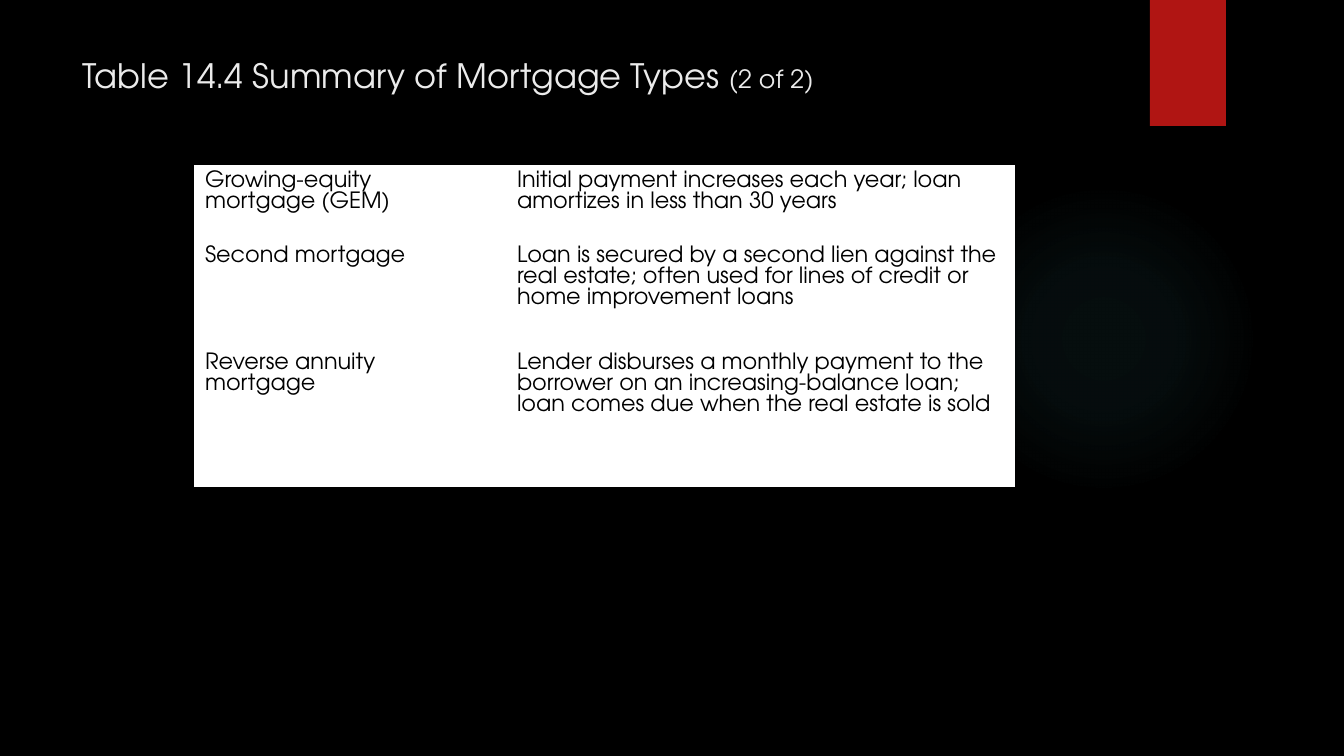
from lxml.etree import SubElement
from pptx import Presentation
from pptx.dml.color import RGBColor
from pptx.enum.shapes import MSO_SHAPE
from pptx.enum.text import MSO_ANCHOR, PP_ALIGN
from pptx.oxml import parse_xml
from pptx.oxml.ns import nsdecls, qn
from pptx.util import Emu, Pt

TITLE = [("Table 14.4 Summary of Mortgage Types ", 24), ("(2 of 2)", 18)]
MORTGAGES = [
    ("Growing-equity\nmortgage (GEM)",
     "Initial payment increases each year; loan amortizes in less than 30 years"),
    ("Second mortgage",
     "Loan is secured by a second lien against the real estate; often used for "
     "lines of credit or home improvement loans"),
    ("Reverse annuity\nmortgage",
     "Lender disburses a monthly payment to the borrower on an increasing-balance "
     "loan; loan comes due when the real estate is sold"),
]
COL_WIDTHS = [312, 507]
ROW_HEIGHTS = [75, 107, 138]
GLOW_STOPS = [(0, 7), (36, 6), (69, 0)]

FONT = "TeX Gyre Adventor"
BLACK = RGBColor(0x00, 0x00, 0x00)
WHITE = RGBColor(0xFF, 0xFF, 0xFF)
RED = RGBColor(0xB0, 0x15, 0x13)
TEAL = RGBColor(0x50, 0xB9, 0xC1)
LIGHT = RGBColor(0xEB, 0xEB, 0xEB)


def px(*values):
    """Turn px lengths into a list of EMU lengths."""
    return [Emu(round(v * 914400 / 100.8)) for v in values]


def add_plain_shape(s, kind, *box):
    """Add a shape without line or shadow."""
    sp = s.shapes.add_shape(kind, *px(*box))
    sp.shadow.inherit = False
    sp.line.fill.background()
    return sp


def add_glow(s):
    """Add the soft round light at the right."""
    sp = add_plain_shape(s, MSO_SHAPE.OVAL, 949, 184, 310, 310)
    stops = "".join(
        f'<a:gs pos="{pos * 1000}"><a:srgbClr val="{TEAL}">'
        f'<a:alpha val="{alpha * 1000}"/></a:srgbClr></a:gs>'
        for pos, alpha in GLOW_STOPS)
    grad = parse_xml(
        f'<a:gradFill {nsdecls("a")} rotWithShape="1"><a:gsLst>{stops}</a:gsLst>'
        '<a:path path="circle"><a:fillToRect l="50000" t="50000" r="50000" b="50000"/>'
        '</a:path></a:gradFill>')
    sp.fill.background()
    props = sp.fill._xPr
    props.replace(props.find(qn("a:noFill")), grad)


def style_run(r, size, color):
    """Set font, size and colour of a run."""
    r.font.name = FONT
    r.font.size = Pt(size)
    r.font.color.rgb = color


def set_title(s):
    """Place and fill the title placeholder."""
    sp = s.shapes.title
    sp.left, sp.top, sp.width, sp.height = px(72, 50, 1037, 154)
    tf = sp.text_frame
    tf.word_wrap = True
    tf.vertical_anchor = MSO_ANCHOR.TOP
    p = tf.paragraphs[0]
    p.alignment = PP_ALIGN.LEFT
    for text, size in TITLE:
        r = p.add_run()
        r.text = text
        style_run(r, size, LIGHT)


def fill_cell(cell, text):
    """Write one table cell with white fill and borders."""
    cell.text = text
    for p in cell.text_frame.paragraphs:
        p.line_spacing = Pt(15)
        for r in p.runs:
            style_run(r, 16, BLACK)
    props = cell._tc.get_or_add_tcPr()
    for side in ("lnL", "lnR", "lnT", "lnB"):
        ln = SubElement(props, qn(f"a:{side}"), w=str(Pt(1)))
        SubElement(SubElement(ln, qn("a:solidFill")), qn("a:srgbClr"), val=str(WHITE))
    cell.fill.solid()
    cell.fill.fore_color.rgb = WHITE


def add_mortgage_table(s):
    """Add the table of mortgage types."""
    box = px(195, 166, sum(COL_WIDTHS), sum(ROW_HEIGHTS))
    table = s.shapes.add_table(len(MORTGAGES), len(COL_WIDTHS), *box).table
    table.first_row = table.horz_banding = False
    for col, width in zip(table.columns, px(*COL_WIDTHS)):
        col.width = width
    for row, height, texts in zip(table.rows, px(*ROW_HEIGHTS), MORTGAGES):
        row.height = height
        for cell, text in zip(row.cells, texts):
            fill_cell(cell, text)


def main():
    """Build the slide and save it."""
    prs = Presentation()
    prs.slide_width, prs.slide_height = px(1344, 756)
    s = prs.slides.add_slide(prs.slide_layouts[5])
    s.background.fill.solid()
    s.background.fill.fore_color.rgb = BLACK
    add_glow(s)
    ribbon = add_plain_shape(s, MSO_SHAPE.RECTANGLE, 1150, 0, 76, 126)
    ribbon.fill.solid()
    ribbon.fill.fore_color.rgb = RED
    set_title(s)
    add_mortgage_table(s)
    prs.save("out.pptx")


if __name__ == "__main__":
    main()
